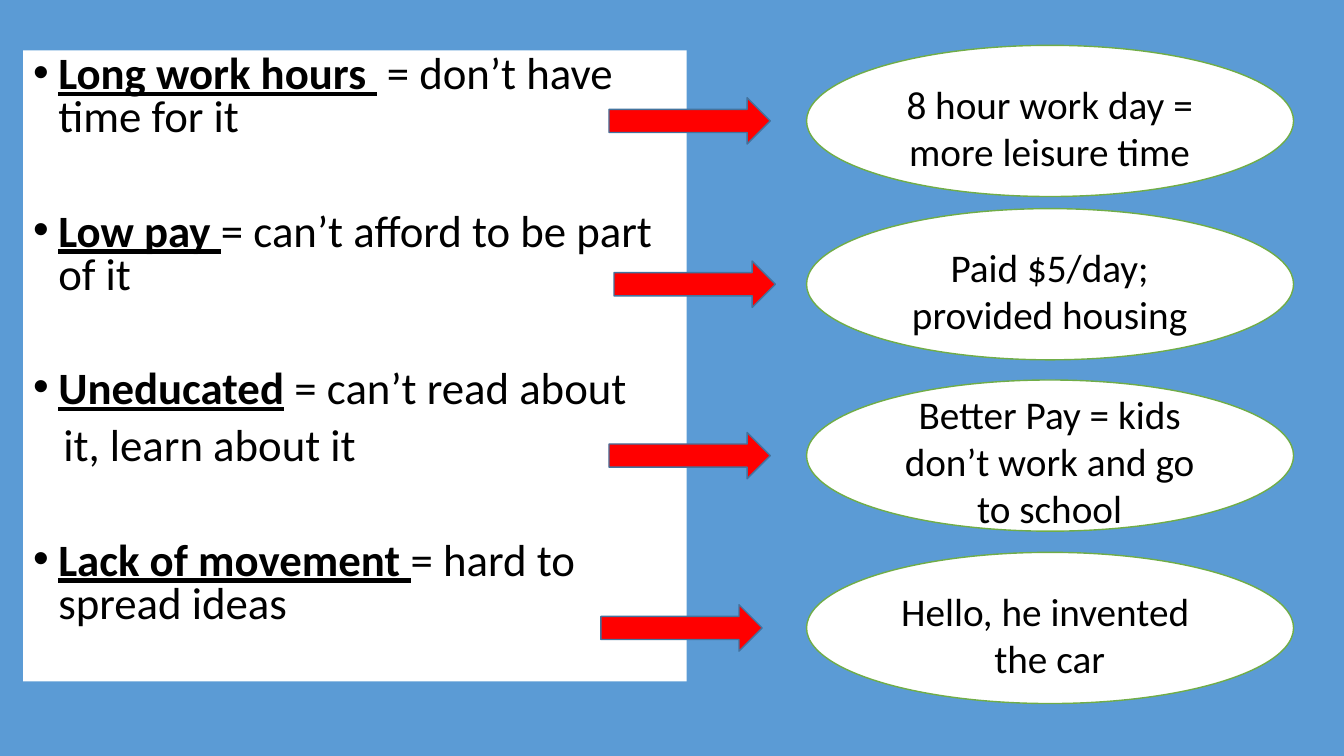
"""Build a slide that pairs four obstacles to leisure with their remedies."""
from lxml import etree
from pptx import Presentation
from pptx.dml.color import RGBColor
from pptx.enum.shapes import MSO_SHAPE as SHAPE
from pptx.enum.text import MSO_ANCHOR as ANCHOR, PP_ALIGN as ALIGN
from pptx.oxml.ns import qn
from pptx.util import Inches, Pt

OBSTACLES = [
    ("Long work hours ", " = don’t have time for it"),
    ("Low pay ", "= can’t afford to be part of it"),
    ("Uneducated", " = can’t read about"),
    ("", "it, learn about it"),
    ("Lack of movement ", "= hard to spread ideas"),
]
# ellipse top, text top, text height, arrow left, lines
REMEDIES = [
    (0.45, 0.75, 1.04, 6.04, ["8 hour work day = more leisure time"]),
    (2.07, 2.36, 1.04, 6.09, ["Paid $5/day; provided housing"]),
    (3.77, 3.82, 1.51, 6.04, ["Better Pay = kids don’t work and go to school"]),
    (5.48, 5.78, 1.04, 5.96, ["Hello, he invented ", "the car"]),
]
ELLIPSE_LEFT, ELLIPSE_W, ELLIPSE_H = 8, 4.83, 1.5
TEXT_LEFT, TEXT_W = 8.72, 3.38
ARROW_W, ARROW_H = 1.6, 0.46
LINE_GAP, GROUP_GAP = 10, 51


def color(value):
    return RGBColor.from_string(value)


def add_text(p, text, size=28, bold=False, underline=False):
    r = p.add_run()
    r.text = text
    r.font.name = "Calibri"
    r.font.size = Pt(size)
    r.font.bold = bold
    r.font.underline = underline
    r.font.color.rgb = color("000000")


def add_block(slide, kind, box, fill, line=None):
    sp = slide.shapes.add_shape(kind, *map(Inches, box))
    sp.shadow.inherit = False
    sp.fill.solid()
    sp.fill.fore_color.rgb = color(fill)
    if line:
        sp.line.color.rgb = color(line)
        sp.line.width = Pt(1)
    else:
        sp.line.fill.background()
    return sp


def set_indent(p, left, first=0, bullet=None):
    pPr = p._p.get_or_add_pPr()
    pPr.set("marL", str(Inches(left)))
    pPr.set("indent", str(Inches(first)))
    if bullet:
        font = etree.SubElement(pPr, qn("a:buFont"))
        font.set("typeface", "Arial")
        etree.SubElement(pPr, qn("a:buChar")).set("char", bullet)


def add_obstacles(slide):
    sp = add_block(slide, SHAPE.RECTANGLE, (0.23, 0.5, 6.58, 6.26), "FFFFFF")
    tf = sp.text_frame
    tf.word_wrap = True
    tf.vertical_anchor = ANCHOR.TOP
    for i, (term, meaning) in enumerate(OBSTACLES):
        p = tf.add_paragraph() if i else tf.paragraphs[0]
        if term:
            set_indent(p, 0.25, -0.25, "•")
            add_text(p, term, size=32, bold=True, underline=True)
        else:
            set_indent(p, 0.3)
        add_text(p, meaning, size=32)
        p.alignment = ALIGN.LEFT
        p.line_spacing = 0.8
        if i:
            p.space_before = Pt(GROUP_GAP if term else LINE_GAP)


def add_remedy(slide, top, text_top, text_h, arrow_left, lines):
    add_block(slide, SHAPE.OVAL, (ELLIPSE_LEFT, top, ELLIPSE_W, ELLIPSE_H), "FFFFFF", "70AD47")
    arrow_top = top + (ELLIPSE_H - ARROW_H) / 2
    add_block(slide, SHAPE.RIGHT_ARROW, (arrow_left, arrow_top, ARROW_W, ARROW_H), "FF0000", "43739E")
    box = (TEXT_LEFT, text_top, TEXT_W, text_h)
    tf = slide.shapes.add_textbox(*map(Inches, box)).text_frame
    tf.word_wrap = True
    for i, text in enumerate(lines):
        p = tf.add_paragraph() if i else tf.paragraphs[0]
        p.alignment = ALIGN.CENTER
        add_text(p, text)


def main():
    prs = Presentation()
    prs.slide_width, prs.slide_height = Inches(13.33), Inches(7.5)
    slide = prs.slides.add_slide(prs.slide_layouts[6])
    slide.background.fill.solid()
    slide.background.fill.fore_color.rgb = color("5B9BD5")
    add_obstacles(slide)
    for remedy in REMEDIES:
        add_remedy(slide, *remedy)
    prs.save("out.pptx")


if __name__ == "__main__":
    main()
